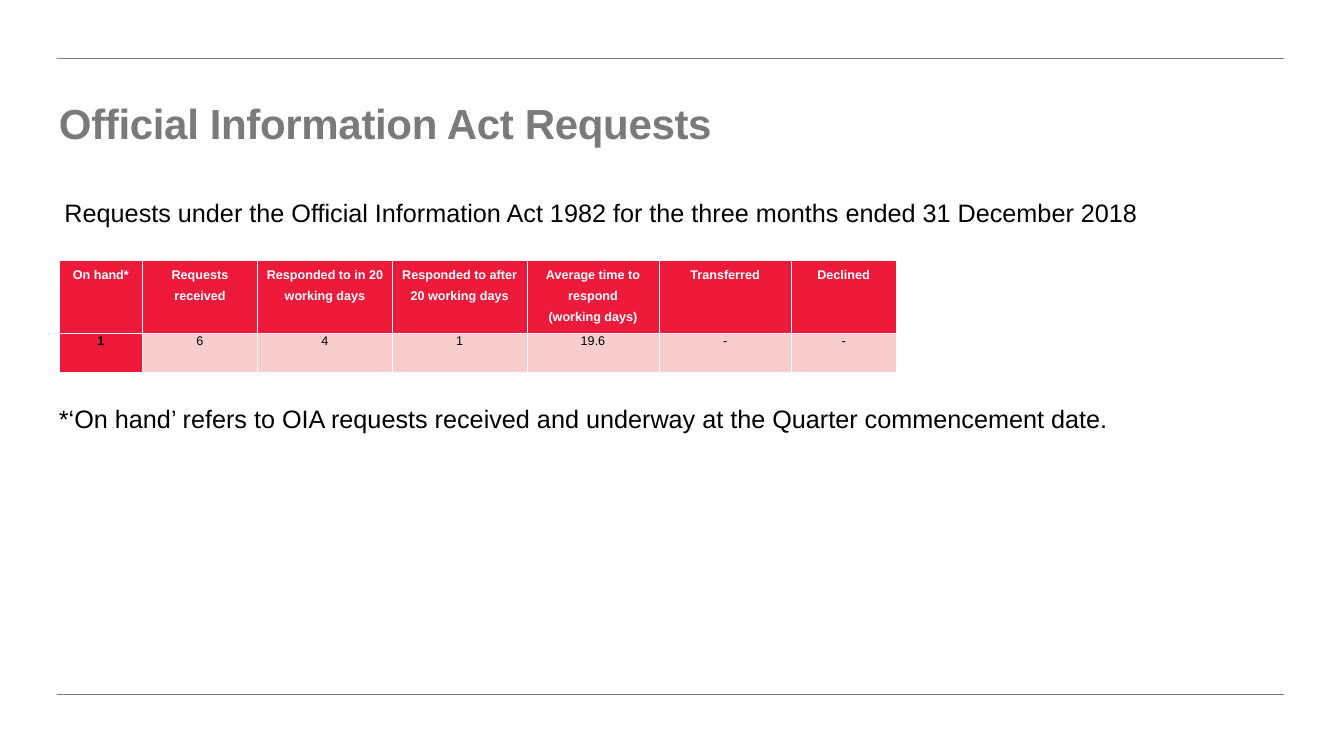
from lxml import etree
from pptx import Presentation
from pptx.dml.color import RGBColor
from pptx.enum.shapes import MSO_CONNECTOR
from pptx.enum.text import MSO_ANCHOR, MSO_AUTO_SIZE, PP_ALIGN
from pptx.oxml import parse_xml
from pptx.oxml.ns import nsdecls, qn
from pptx.util import Inches, Pt

STRAIGHT = MSO_CONNECTOR.STRAIGHT
CENTER = PP_ALIGN.CENTER
MIDDLE = MSO_ANCHOR.MIDDLE
TOP = MSO_ANCHOR.TOP
GROW = MSO_AUTO_SIZE.SHAPE_TO_FIT_TEXT
NO_GROW = MSO_AUTO_SIZE.NONE

GREY, RED, PINK = "7B7979", "ED1A3B", "F8CDCE"
BLACK, WHITE = "000000", "FFFFFF"

COLUMNS = [
    (1.64, "On hand*", "1"),
    (2.29, "Requests\nreceived", "6"),
    (2.67, "Responded to in 20 working days", "4"),
    (2.67, "Responded to after 20 working days", "1"),
    (2.62, "Average time to respond\n(working days)", "19.6"),
    (2.62, "Transferred", "-"),
    (2.08, "Declined", "-"),
]
ROW_HEIGHTS = [1.45, 0.76]
UNPADDED_COLUMN = 4


def color(value):
    return RGBColor.from_string(value)


class SlideBuilder:
    font_name = "Arial"

    def __init__(self, slide):
        self.slide = slide

    def style(self, paragraph, size, text_color, bold=False):
        font = paragraph.font
        font.name = self.font_name
        font.size = Pt(size)
        font.bold = bold
        font.color.rgb = color(text_color)

    def rule(self, left, right, top):
        connector = self.slide.shapes.add_connector(
            STRAIGHT, Inches(left), Inches(top), Inches(right), Inches(top))
        connector.line.color.rgb = color(GREY)
        connector.line.width = Pt(0.5)
        etree.SubElement(connector._element.spPr, qn("a:effectLst"))

    def text(self, left, top, width, height, content, size=36,
             text_color=BLACK, bold=False, anchor=TOP, auto_size=GROW):
        shape = self.slide.shapes.add_textbox(
            Inches(left), Inches(top), Inches(width), Inches(height))
        frame = shape.text_frame
        frame.word_wrap = True
        frame.auto_size = auto_size
        frame.vertical_anchor = anchor
        paragraph = frame.paragraphs[0]
        paragraph.text = content
        self.style(paragraph, size, text_color, bold)
        return paragraph

    def title(self, left, top, width, height, content):
        paragraph = self.text(left, top, width, height, content, 60, GREY,
                              True, MIDDLE, NO_GROW)
        paragraph.line_spacing = 0.9
        paragraph.runs[0]._r.get_or_add_rPr().set("spc", "-50")

    def borders(self, cell):
        properties = cell._tc.get_or_add_tcPr()
        for side in ("lnL", "lnR", "lnT", "lnB"):
            properties.append(parse_xml(
                f'<a:{side} {nsdecls("a")} w="{Pt(1)}"><a:solidFill>'
                f'<a:srgbClr val="{WHITE}"/></a:solidFill></a:{side}>'))

    def cell(self, cell, content, fill, text_color, bold, spacing, padding):
        self.borders(cell)
        cell.fill.solid()
        cell.fill.fore_color.rgb = color(fill)
        cell.margin_left = cell.margin_right = Inches(padding)
        cell.margin_top = cell.margin_bottom = 0
        cell.text_frame.text = content
        for paragraph in cell.text_frame.paragraphs:
            paragraph.alignment = CENTER
            paragraph.line_spacing = spacing
            self.style(paragraph, 18, text_color, bold)

    def table(self, left, top, columns, row_heights):
        width = sum(column[0] for column in columns)
        table = self.slide.shapes.add_table(
            len(row_heights), len(columns), Inches(left), Inches(top),
            Inches(width), Inches(sum(row_heights))).table
        for row, height in zip(table.rows, row_heights):
            row.height = Inches(height)
        for index, (column_width, heading, value) in enumerate(columns):
            table.columns[index].width = Inches(column_width)
            padding = 0 if index == UNPADDED_COLUMN else 0.07
            first = index == 0
            self.cell(table.cell(0, index), heading, RED, WHITE, True, 1.5,
                      padding)
            self.cell(table.cell(1, index), value, RED if first else PINK,
                      BLACK, first, 1.05, padding)


def main():
    presentation = Presentation()
    presentation.slide_width = Inches(26.65)
    presentation.slide_height = Inches(15)
    slide = presentation.slides.add_slide(presentation.slide_layouts[6])
    builder = SlideBuilder(slide)
    for top in (1.15, 13.78):
        builder.rule(1.13, 25.46, top)
    builder.text(1.18, 3.87, 24.28, 0.71,
                 "Requests under the Official Information Act 1982 "
                 "for the three months ended 31 December 2018")
    builder.title(1.07, 1.7, 13.21, 1.58, "Official Information Act Requests")
    builder.table(1.18, 5.17, COLUMNS, ROW_HEIGHTS)
    builder.text(1.07, 7.96, 24.28, 0.71,
                 "*‘On hand’ refers to OIA requests received and underway "
                 "at the Quarter commencement date.")
    presentation.save("out.pptx")


if __name__ == "__main__":
    main()
